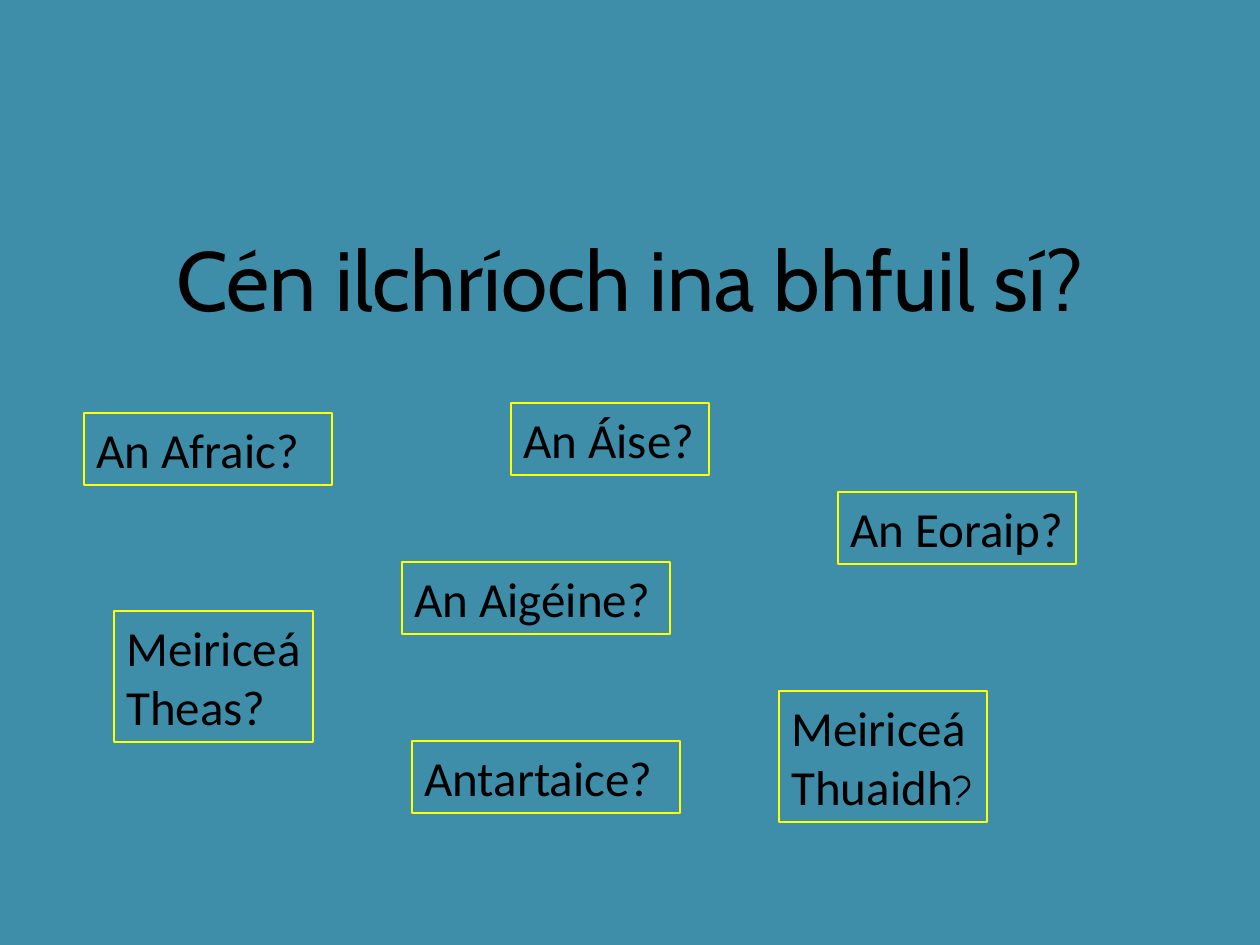
from pptx import Presentation
from pptx import util as u
from pptx.dml.color import RGBColor
from pptx.enum import shapes, text

PX_PER_INCH = 126
BACKGROUND = RGBColor(0x3E, 0x8E, 0xA9)
YELLOW = RGBColor(0xFF, 0xFF, 0x00)
BLACK = RGBColor(0x00, 0x00, 0x00)

ONE_LINE, TWO_LINES = 72, 131

# Left, top, width, height in px, then the continent
ANSWERS = [
    (84, 413, 248, ONE_LINE, "An Afraic?"),
    (511, 403, 198, ONE_LINE, "An Áise?"),
    (838, 492, 238, ONE_LINE, "An Eoraip?"),
    (402, 562, 268, ONE_LINE, "An Aigéine?"),
    (779, 691, 208, TWO_LINES, "Meiriceá Thuaidh"),
    (114, 611, 199, TWO_LINES, "Meiriceá Theas?"),
    (412, 741, 268, ONE_LINE, "Antartaice?"),
]


def px(length):
    return u.Emu(round(length * u.Inches(1) / PX_PER_INCH))


def add_run(paragraph, words, size, font):
    run = paragraph.add_run()
    run.text = words
    run.font.size = u.Pt(size)
    run.font.name = font
    run.font.color.rgb = BLACK


def add_question(slide, left, top, width, height):
    question = slide.shapes.add_textbox(px(left), px(top), px(width), px(height))
    frame = question.text_frame
    frame.word_wrap = True
    paragraph = frame.paragraphs[0]
    paragraph.alignment = text.PP_ALIGN.CENTER
    add_run(paragraph, "Cén ilchríoch ina bhfuil sí?", 48, "Cabin")


def add_answer(slide, left, top, width, height, continent):
    """Place one outlined answer and return its paragraph."""
    answer = slide.shapes.add_shape(
        shapes.MSO_SHAPE.RECTANGLE, px(left), px(top), px(width), px(height))
    answer.shadow.inherit = False
    answer.fill.background()
    answer.line.color.rgb = YELLOW
    answer.line.width = u.Pt(0.75)
    frame = answer.text_frame
    frame.word_wrap = True
    frame.auto_size = text.MSO_AUTO_SIZE.SHAPE_TO_FIT_TEXT
    frame.vertical_anchor = text.MSO_ANCHOR.TOP
    paragraph = frame.paragraphs[0]
    paragraph.alignment = text.PP_ALIGN.LEFT
    add_run(paragraph, continent, 28, "Calibri")
    return paragraph


def main():
    deck = Presentation()
    deck.slide_width, deck.slide_height = px(1260), px(945)
    slide = deck.slides.add_slide(deck.slide_layouts[6])
    slide.background.fill.solid()
    slide.background.fill.fore_color.rgb = BACKGROUND

    add_question(slide, 63, 221, 1134, 93)
    for answer in ANSWERS:
        paragraph = add_answer(slide, *answer)
        if not answer[-1].endswith("?"):
            add_run(paragraph, "?", 24, "Comic Neue")

    deck.save("out.pptx")


if __name__ == "__main__":
    main()
